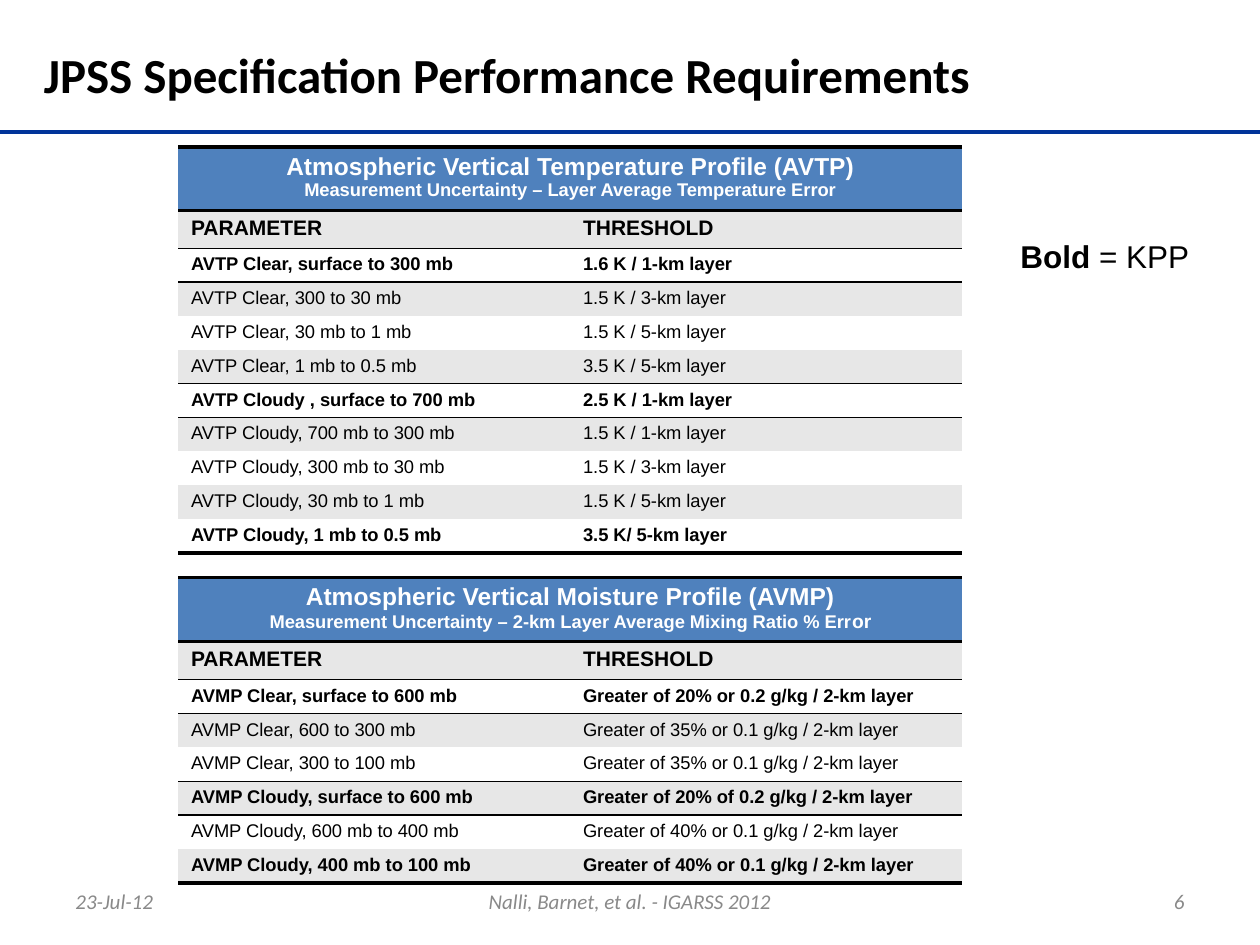
"""Build the slide of temperature and moisture profile requirements."""
from lxml import etree
from pptx import Presentation
from pptx.dml.color import RGBColor
from pptx.enum import shapes, text
from pptx.oxml import ns
from pptx.util import Pt

COLOURS = {"black": "000000", "white": "FFFFFF", "rule": "003399",
           "header": "4F81BD", "band": "E7E7E7", "footer": "898989"}
LEFT, CENTER, RIGHT = text.PP_ALIGN.LEFT, text.PP_ALIGN.CENTER, text.PP_ALIGN.RIGHT
HANG = str(Pt(27))


def add_span(para, words, size, colour="black", name="Arial", **style):
    span = para.add_run()
    span.text = words
    for key, value in {"size": Pt(size), "name": name, **style}.items():
        setattr(span.font, key, value)
    span.font.color.rgb = RGBColor.from_string(COLOURS[colour])


def format_cell(cell, fill, top, bottom):
    props = cell._tc.get_or_add_tcPr()
    for side, width in {"L": 0, "R": 0, "T": top, "B": bottom}.items():
        line = etree.SubElement(props, ns.qn(f"a:ln{side}"), w=str(Pt(width)))
        if width:
            paint = etree.SubElement(line, ns.qn("a:solidFill"))
            etree.SubElement(paint, ns.qn("a:srgbClr"), val=COLOURS["black"])
        else:
            etree.SubElement(line, ns.qn("a:noFill"))
    cell.fill.solid()
    cell.fill.fore_color.rgb = RGBColor.from_string(COLOURS[fill])
    cell.margin_top = cell.margin_bottom = Pt(3.4)
    for para in cell.text_frame.paragraphs:
        indents = para._p.get_or_add_pPr()
        indents.set("marL", HANG)
        indents.set("indent", f"-{HANG}")


deck = Presentation()
deck.slide_width, deck.slide_height = Pt(720), Pt(540)
page = deck.slides.add_slide(deck.slide_layouts[6])

rule = page.shapes.add_connector(shapes.MSO_CONNECTOR.STRAIGHT, 0, Pt(75.6), Pt(720), Pt(75.6))
rule.line.width = Pt(2.25)
rule.line.color.rgb = RGBColor.from_string(COLOURS["rule"])
etree.SubElement(rule._element.spPr, ns.qn("a:effectLst"))

title_style = {"size": 28, "name": "Calibri", "bold": True}
footer_style = {"size": 12, "name": "Calibri", "colour": "footer", "italic": True}
key_style = {"size": 18}
MIDDLE, TOP = text.MSO_ANCHOR.MIDDLE, text.MSO_ANCHOR.TOP
labels = [
    ((18, 18, 564, 48), MIDDLE, LEFT, title_style,
     [("JPSS Specification Performance Requirements", {})]),
    ((36, 500.5, 168, 28.75), MIDDLE, LEFT, footer_style, [("23-Jul-12", {})]),
    ((246, 500.5, 228, 28.75), MIDDLE, CENTER, footer_style,
     [("Nalli, Barnet, et al. - IGARSS 2012", {})]),
    ((516, 500.5, 168, 28.75), MIDDLE, RIGHT, footer_style, [("6", {})]),
    ((576, 132, 126, 29), TOP, LEFT, key_style,
     [("Bold", {"bold": True}), (" = KPP", {"bold": False})]),
]
for place, anchor, align, style, spans in labels:
    box = page.shapes.add_textbox(*map(Pt, place))
    box.text_frame.word_wrap = True
    box.text_frame.vertical_anchor = anchor
    para = box.text_frame.paragraphs[0]
    para.alignment = align
    for words, extra in spans:
        add_span(para, words, **style, **extra)

profiles = [
    {"top": 84, "header": 34.9, "line": 0.75, "bold": {0, 4, 8},
     "title": "Atmospheric Vertical Temperature Profile (AVTP)",
     "subtitle": [("Measurement Uncertainty – Layer Average Temperature Error", 10.5)],
     "rows": [
         ("AVTP Clear, surface to 300 mb", "1.6 K / 1-km layer"),
         ("AVTP Clear, 300 to 30 mb", "1.5 K / 3-km layer"),
         ("AVTP Clear, 30 mb to 1 mb", "1.5 K / 5-km layer"),
         ("AVTP Clear, 1 mb to 0.5 mb", "3.5 K / 5-km layer"),
         ("AVTP Cloudy , surface to 700 mb", "2.5 K / 1-km layer"),
         ("AVTP Cloudy, 700 mb to 300 mb", "1.5 K / 1-km layer"),
         ("AVTP Cloudy, 300 mb to 30 mb", "1.5 K / 3-km layer"),
         ("AVTP Cloudy, 30 mb to 1 mb", "1.5 K / 5-km layer"),
         ("AVTP Cloudy, 1 mb to 0.5 mb", "3.5 K/ 5-km layer")]},
    {"top": 330, "header": 35.5, "line": 1, "bold": {0, 3, 5},
     "title": "Atmospheric Vertical Moisture Profile (AVMP)",
     "subtitle": [("Measurement Uncertainty – 2-km Layer Average Mixing Ratio % Err", 10.5),
                  ("or", 11)],
     "rows": [
         ("AVMP Clear, surface to 600 mb", "Greater of 20% or 0.2 g/kg / 2-km layer"),
         ("AVMP Clear, 600 to 300 mb", "Greater of 35% or 0.1 g/kg / 2-km layer"),
         ("AVMP Clear, 300 to 100 mb", "Greater of 35% or 0.1 g/kg / 2-km layer"),
         ("AVMP Cloudy, surface to 600 mb", "Greater of 20% of 0.2 g/kg / 2-km layer"),
         ("AVMP Cloudy, 600 mb to 400 mb", "Greater of 40% or 0.1 g/kg / 2-km layer"),
         ("AVMP Cloudy, 400 mb to 100 mb", "Greater of 40% or 0.1 g/kg / 2-km layer")]},
]
for profile in profiles:
    rows = [("PARAMETER", "THRESHOLD"), *profile["rows"]]
    heights = [profile["header"], 21.6] + [18.9] * len(profile["rows"])
    frame = page.shapes.add_table(len(heights), 2, Pt(102), Pt(profile["top"]),
                                  Pt(448), Pt(sum(heights)))
    table = frame.table
    table.first_row = table.horz_banding = False
    for row, height in zip(table.rows, heights):
        row.height = Pt(height)

    edges = [2, 2] + [0] * (len(rows) - 1) + [2]
    for index in profile["bold"] - {len(profile["rows"]) - 1}:
        edges[index + 2] = edges[index + 3] = profile["line"]

    header = table.cell(0, 0)
    header.merge(table.cell(0, 1))
    first, second = header.text_frame.paragraphs[0], header.text_frame.add_paragraph()
    first.alignment = second.alignment = CENTER
    add_span(first, profile["title"], 14, "white", bold=True)
    for words, size in profile["subtitle"]:
        add_span(second, words, size, "white", bold=True)
    for cell in table.rows[0].cells:
        format_cell(cell, "header", edges[0], edges[1])

    for number, values in enumerate(rows, 1):
        heading = number == 1
        bold = heading or number - 2 in profile["bold"]
        for column, words in enumerate(values):
            cell = table.cell(number, column)
            add_span(cell.text_frame.paragraphs[0], words, 12 if heading else 10.5, bold=bold)
            format_cell(cell, "band" if number % 2 else "white", edges[number], edges[number + 1])

deck.save("out.pptx")
